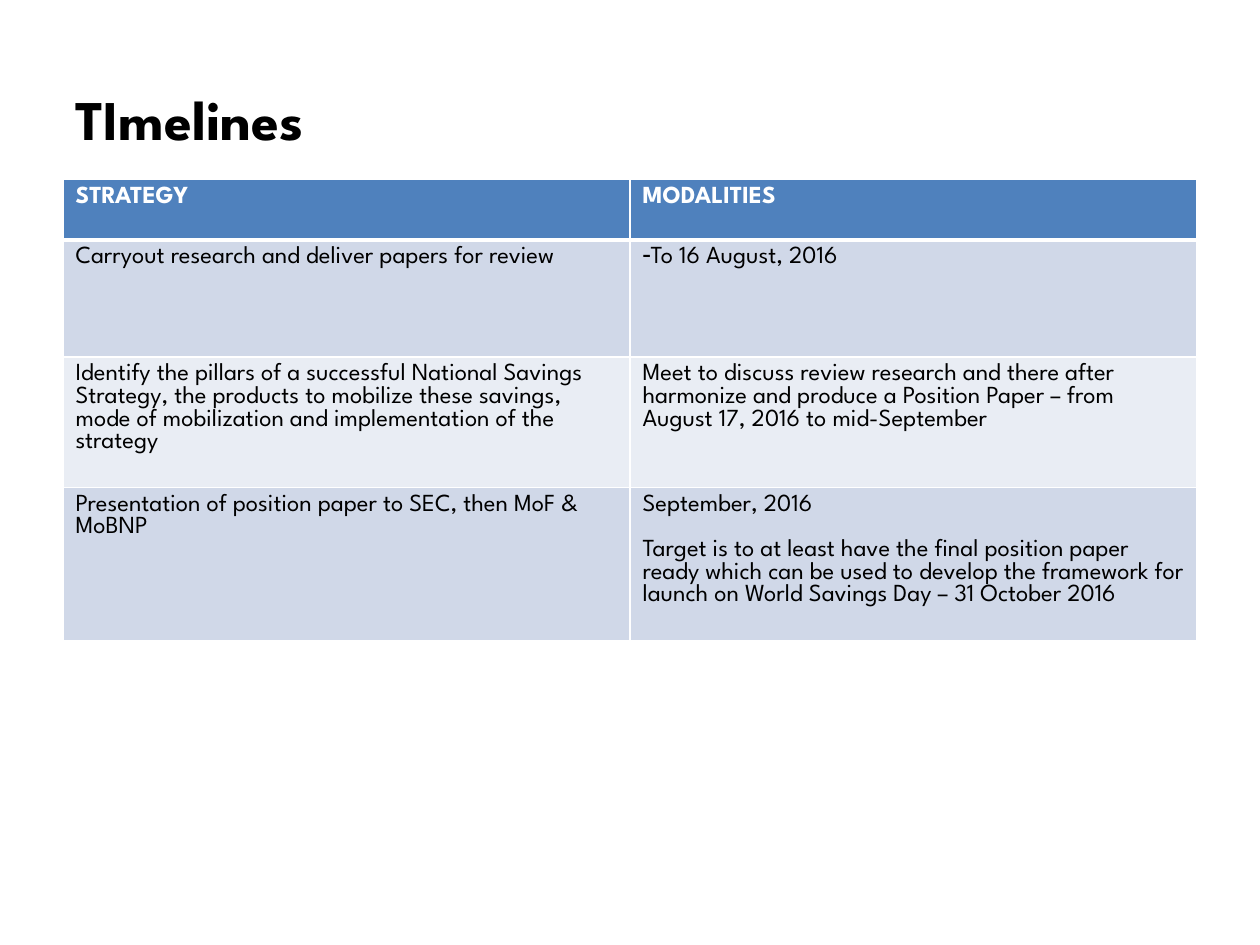
from lxml.etree import SubElement
from pptx import Presentation
from pptx.dml.color import RGBColor
from pptx.enum.text import MSO_ANCHOR
from pptx.oxml.ns import qn
from pptx.util import Inches, Pt

WHITE, BLACK = "FFFFFF", "000000"
HEADER_FILL = "4F81BD"
BAND_FILLS = ["D0D8E8", "E9EDF4"]

HEADINGS = ["STRATEGY", "MODALITIES"]
TIMELINE = [
    ["Carryout research and deliver papers for review",
     "- To 16 August, 2016"],
    ["Identify the pillars of a successful National Savings Strategy, the products "
     "to mobilize these savings, mode of mobilization and implementation of the strategy",
     "Meet to discuss review research and there after harmonize and produce a "
     "Position Paper – from August 17, 2016 to mid-September"],
    ["Presentation of position paper to SEC, then MoF & MoBNP",
     "September, 2016\nTarget is to at least have the final position paper ready which "
     "can be used to develop the framework for launch on World Savings Day – 31 October 2016"],
]
ROW_HEIGHTS = [0.48, 0.93, 1, 0.98]


def color(hex_value):
    return RGBColor.from_string(hex_value)


class TimelineSlide:
    font = "League Spartan"
    title_size = 32
    body_size = 14
    paragraph_gap = 13

    def __init__(self, presentation):
        self.width = presentation.slide_width
        self.height = presentation.slide_height
        self.slide = presentation.slides.add_slide(presentation.slide_layouts[6])

    def box(self, left, top, width, height):
        """Turn shares of the slide's size into lengths."""
        return (int(left * self.width), int(top * self.height),
                int(width * self.width), int(height * self.height))

    def fill_text(self, text_frame, text, size, hex_value, bold=False):
        """Fill a text frame; a leading "- " makes a dash bullet."""
        text_frame.word_wrap = True
        text_frame.text = text
        for index, paragraph in enumerate(text_frame.paragraphs):
            if index:
                paragraph.space_before = Pt(self.paragraph_gap)
            if paragraph.text.startswith("- "):
                paragraph.runs[0].text = paragraph.text[2:]
                self.add_dash(paragraph)
            for run in paragraph.runs:
                run.font.name = self.font
                run.font.size = Pt(size)
                run.font.bold = bold
                run.font.color.rgb = color(hex_value)

    def add_dash(self, paragraph):
        properties = paragraph._p.get_or_add_pPr()
        properties.set("marL", "0")
        properties.set("indent", "0")
        SubElement(properties, qn("a:buChar"), char="-")

    def title(self, text, *shares):
        text_frame = self.slide.shapes.add_textbox(*self.box(*shares)).text_frame
        text_frame.vertical_anchor = MSO_ANCHOR.MIDDLE
        self.fill_text(text_frame, text, self.title_size, BLACK, bold=True)

    def borders(self, cell, top, bottom):
        properties = cell._tc.get_or_add_tcPr()
        for side, points in zip("LRTB", (1, 1, top, bottom)):
            line = SubElement(properties, qn(f"a:ln{side}"), w=str(Pt(points)))
            SubElement(SubElement(line, qn("a:solidFill")), qn("a:srgbClr"), val=WHITE)

    def table(self, rows, row_heights, *shares):
        """Draw a table whose first row is the header."""
        frame = self.slide.shapes.add_table(len(rows), len(rows[0]), *self.box(*shares))
        table = frame.table
        for row_index, texts in enumerate(rows):
            table.rows[row_index].height = Inches(row_heights[row_index])
            header = row_index == 0
            fill = HEADER_FILL if header else BAND_FILLS[(row_index - 1) % 2]
            for column_index, text in enumerate(texts):
                cell = table.cell(row_index, column_index)
                self.borders(cell, top=3 if row_index == 1 else 1, bottom=3 if header else 1)
                cell.fill.solid()
                cell.fill.fore_color.rgb = color(fill)
                self.fill_text(cell.text_frame, text, self.body_size,
                               WHITE if header else BLACK, bold=header)


def main():
    presentation = Presentation()
    presentation.slide_width, presentation.slide_height = Inches(10), Inches(7.5)
    page = TimelineSlide(presentation)
    page.title("TImelines", 0.05, 0.04, 0.9, 0.17)
    page.table([HEADINGS, *TIMELINE], ROW_HEIGHTS, 0.05, 0.19, 0.9, 0.45)
    presentation.save("out.pptx")


if __name__ == "__main__":
    main()
